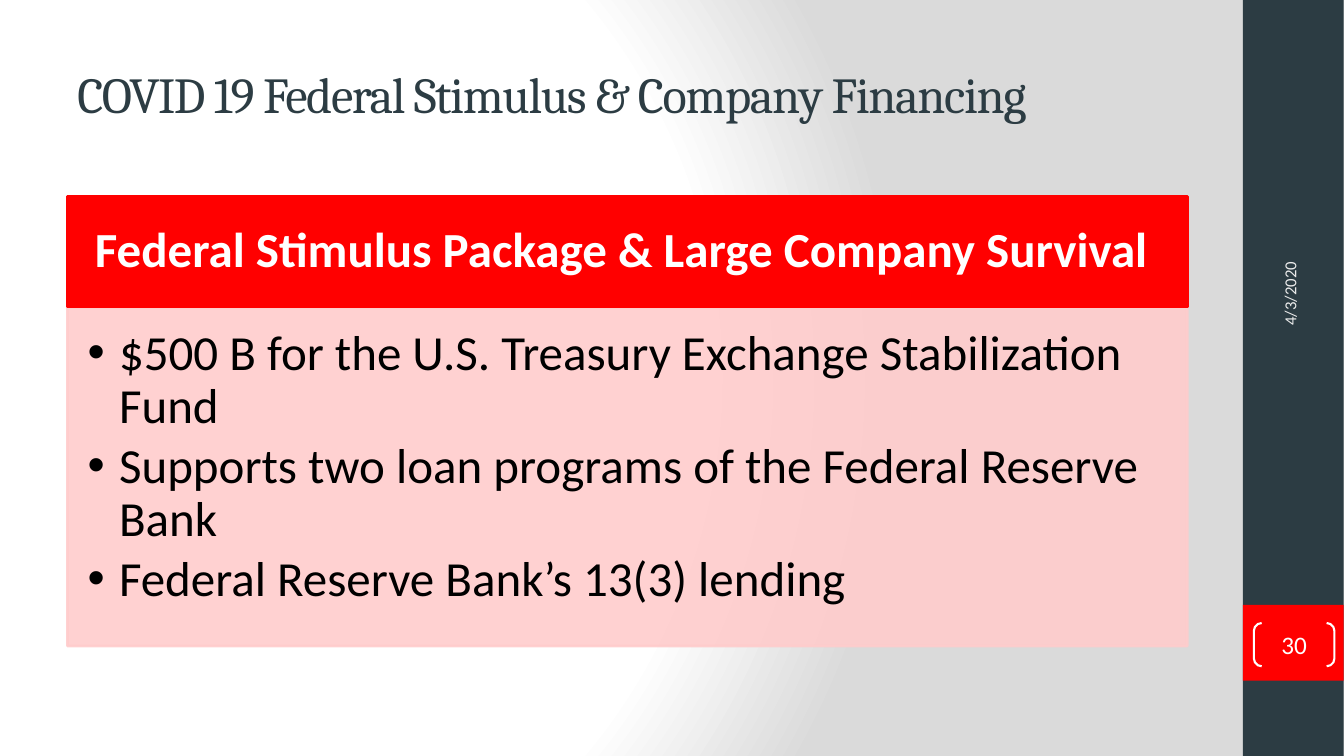
from dataclasses import dataclass

from pptx import Presentation
from pptx.dml.color import RGBColor
from pptx.enum.shapes import MSO_SHAPE
from pptx.enum.text import MSO_ANCHOR, MSO_AUTO_SIZE, PP_ALIGN
from pptx.oxml import parse_xml
from pptx.oxml.ns import nsdecls, qn
from pptx.oxml.xmlchemy import OxmlElement
from pptx.util import Cm, Pt

RECTANGLE = MSO_SHAPE.RECTANGLE
BRACKETS = MSO_SHAPE.DOUBLE_BRACKET
TOP, MIDDLE = MSO_ANCHOR.TOP, MSO_ANCHOR.MIDDLE
LEFT, CENTER = PP_ALIGN.LEFT, PP_ALIGN.CENTER
NO_AUTOFIT = MSO_AUTO_SIZE.NONE


@dataclass(frozen=True)
class Theme:
    slate: str = "2C3C43"
    red: str = "FF0000"
    pink: str = "FFCCCC"
    white: str = "FFFFFF"
    black: str = "000000"
    pale: str = "EBEBEB"
    gray: str = "DADADA"
    heading_font: str = "Cambria"
    body_font: str = "Calibri"
    title_size: float = 36
    body_size: float = 35
    number_size: float = 18
    date_size: float = 12


THEME = Theme()
CONTENT_LEFT, CONTENT_WIDTH = 1.7, 28.22
SIDEBAR_LEFT, SIDEBAR_WIDTH = 31.32, 2.54
SLIDE_WIDTH, SLIDE_HEIGHT = 33.87, 19.05
BULLET_INDENT = 0.79
BULLETS = (
    "$500 B for the U.S. Treasury Exchange Stabilization Fund",
    "Supports two loan programs of the Federal Reserve Bank",
    "Federal Reserve Bank’s 13(3) lending",
)


def set_attributes(target, formats):
    for name, value in formats.items():
        setattr(target, name, value)


def place(shape, left, top, width, height):
    box = {"left": left, "top": top, "width": width, "height": height}
    set_attributes(shape, {name: Cm(value) for name, value in box.items()})


def paint(shape, fill=None, line=None, line_width=2, opacity=100):
    if fill:
        shape.fill.solid()
        shape.fill.fore_color.rgb = RGBColor.from_string(fill)
    else:
        shape.fill.background()
    if line:
        shape.line.color.rgb = RGBColor.from_string(line)
        shape.line.width = Pt(line_width)
    else:
        shape.line.fill.background()
    if opacity < 100:
        for color in shape.element.spPr.iter(qn("a:srgbClr")):
            alpha = OxmlElement("a:alpha")
            alpha.set("val", str(opacity * 1000))
            color.append(alpha)


def add_panel(slide, kind, box, **colors):
    shape = slide.shapes.add_shape(kind, *map(Cm, box))
    shape.shadow.inherit = False
    paint(shape, **colors)
    return shape


def format_frame(frame, anchor, insets=(0.25, 0.13, 0.25, 0.13)):
    sides = ("margin_left", "margin_top", "margin_right", "margin_bottom")
    set_attributes(frame, {
        "word_wrap": True,
        "auto_size": NO_AUTOFIT,
        "vertical_anchor": anchor,
        **dict(zip(sides, map(Cm, insets))),
    })


def write(paragraph, text, size, color, font=THEME.body_font, bold=False,
          **paragraph_formats):
    set_attributes(paragraph, paragraph_formats)
    run = paragraph.add_run()
    run.text = text
    set_attributes(run.font, {"name": font, "size": Pt(size), "bold": bold})
    run.font.color.rgb = RGBColor.from_string(color)
    return run


def add_bullet(paragraph):
    properties = paragraph._p.get_or_add_pPr()
    properties.set("marL", str(Cm(BULLET_INDENT)))
    properties.set("indent", str(-Cm(BULLET_INDENT)))
    for tag, name, value in (("a:buFont", "typeface", "Arial"),
                             ("a:buChar", "char", "•")):
        element = OxmlElement(tag)
        element.set(name, value)
        properties.append(element)


def set_background(slide):
    stops = ((0, THEME.white), (75, THEME.white), (100, THEME.gray))
    stop_xml = "".join(
        f'<a:gs pos="{position * 1000}"><a:srgbClr val="{color}"/></a:gs>'
        for position, color in stops)
    background = parse_xml(
        f'<p:bg {nsdecls("p", "a")}><p:bgPr><a:gradFill rotWithShape="1">'
        f'<a:gsLst>{stop_xml}</a:gsLst><a:path path="circle">'
        '<a:fillToRect l="20000" t="50000" r="100000" b="50000"/></a:path>'
        '</a:gradFill><a:effectLst/></p:bgPr></p:bg>')
    slide.element.cSld.insert(0, background)


def add_sidebar(slide):
    add_panel(slide, RECTANGLE,
              (SIDEBAR_LEFT, 0, SIDEBAR_WIDTH, SLIDE_HEIGHT), fill=THEME.slate)
    add_panel(slide, RECTANGLE,
              (SIDEBAR_LEFT, 15.24, SIDEBAR_WIDTH, 1.91), fill=THEME.red)


def fill_title(slide):
    title = slide.shapes.title
    place(title, CONTENT_LEFT, 0.76, CONTENT_WIDTH, 3.18)
    format_frame(title.text_frame, MIDDLE)
    run = write(title.text_frame.paragraphs[0],
                "COVID 19 Federal Stimulus & Company Financing",
                THEME.title_size, THEME.slate, THEME.heading_font,
                alignment=LEFT)
    run.font._element.set("spc", "-100")


def add_header(slide):
    header = add_panel(slide, RECTANGLE,
                       (CONTENT_LEFT, 4.95, CONTENT_WIDTH, 2.79),
                       fill=THEME.red, line=THEME.red)
    format_frame(header.text_frame, MIDDLE, (0.69, 0.41, 0.69, 0.41))
    write(header.text_frame.paragraphs[0],
          "Federal Stimulus Package & Large Company Survival ",
          THEME.body_size, THEME.white, bold=True,
          alignment=CENTER, line_spacing=0.9)


def fill_body(slide):
    body = slide.placeholders[1]
    place(body, CONTENT_LEFT, 7.75, CONTENT_WIDTH, 8.53)
    paint(body, fill=THEME.pink, line=THEME.pink, opacity=90)
    frame = body.text_frame
    format_frame(frame, TOP, (0.51, 0.51, 0.69, 0.79))
    for index, text in enumerate(BULLETS):
        paragraph = frame.add_paragraph() if index else frame.paragraphs[0]
        add_bullet(paragraph)
        write(paragraph, text, THEME.body_size, THEME.black,
              alignment=LEFT, line_spacing=0.9,
              space_before=Pt(0), space_after=Pt(5.25))


def add_date(slide):
    date = slide.shapes.add_textbox(*map(Cm, (29.11, 4.39, 6.78, 1.35)))
    date.rotation = 270
    format_frame(date.text_frame, MIDDLE)
    write(date.text_frame.paragraphs[0], "4/3/2020",
          THEME.date_size, THEME.pale, alignment=LEFT)


def add_page_number(slide):
    number = add_panel(slide, BRACKETS, (31.6, 15.7, 2.03, 1.09),
                       line=THEME.white, line_width=1.5)
    number.adjustments[0] = 0.18
    format_frame(number.text_frame, MIDDLE, (0, 0, 0, 0))
    write(number.text_frame.paragraphs[0], "30",
          THEME.number_size, THEME.white, alignment=CENTER)


def main():
    presentation = Presentation()
    presentation.slide_width = Cm(SLIDE_WIDTH)
    presentation.slide_height = Cm(SLIDE_HEIGHT)
    slide = presentation.slides.add_slide(presentation.slide_layouts[1])
    for build in (set_background, add_sidebar, fill_title, add_header,
                  fill_body, add_date, add_page_number):
        build(slide)
    presentation.save("out.pptx")


if __name__ == "__main__":
    main()
